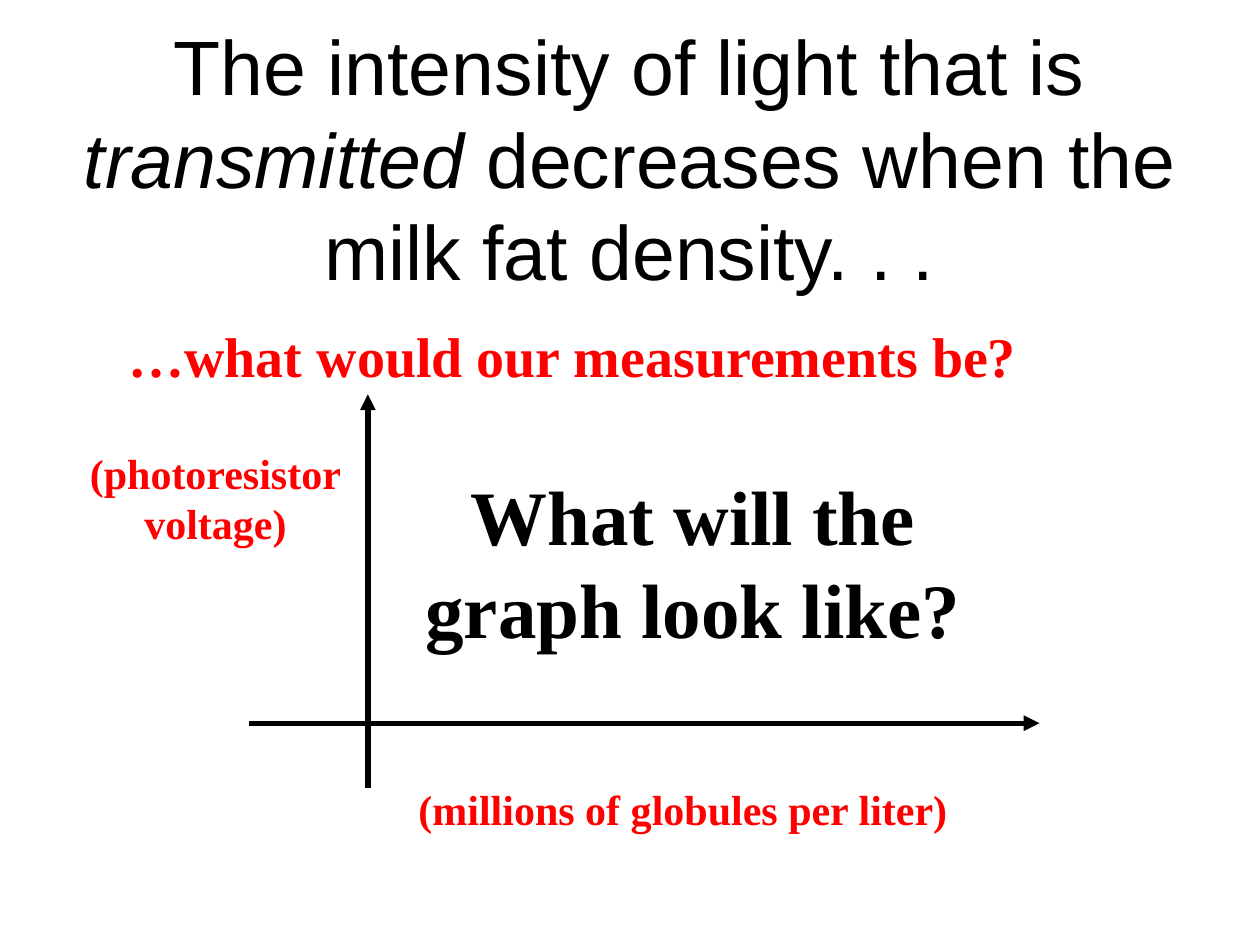
from dataclasses import dataclass

from pptx import Presentation
from pptx.dml.color import RGBColor
from pptx.enum.shapes import MSO_CONNECTOR, MSO_SHAPE
from pptx.enum.text import MSO_ANCHOR, MSO_AUTO_SIZE, PP_ALIGN
from pptx.oxml.ns import qn
from pptx.util import Inches, Pt
from lxml.etree import SubElement


@dataclass(frozen=True)
class Theme:
    ink: RGBColor = RGBColor(0, 0, 0)
    accent: RGBColor = RGBColor(255, 0, 0)
    paper: RGBColor = RGBColor(255, 255, 255)
    heading_font: str = "Arial"
    body_font: str = "Times New Roman"
    large: int = 44
    medium: int = 32
    small: int = 24
    axis_width: int = 3
    leading: float = 1.2


THEME = Theme()


def place(shape, box):
    shape.left, shape.top, shape.width, shape.height = (Inches(v) for v in box)


def write(frame, lines, size, color, font=THEME.body_font, bold=True,
          align=PP_ALIGN.CENTER, anchor=MSO_ANCHOR.TOP, wrap=True):
    """Fill a text frame; each line is a list of (text, italic) runs."""
    frame.auto_size = MSO_AUTO_SIZE.NONE
    frame.word_wrap = wrap
    frame.vertical_anchor = anchor
    for number, line in enumerate(lines):
        paragraph = frame.add_paragraph() if number else frame.paragraphs[0]
        paragraph.alignment = align
        paragraph.line_spacing = Pt(size * THEME.leading)
        for text, italic in line:
            run = paragraph.add_run()
            run.text = text
            run.font.name = font
            run.font.size = Pt(size)
            run.font.bold = bold
            run.font.italic = italic
            run.font.color.rgb = color


def add_title(slide, box):
    title = slide.shapes.title
    place(title, box)
    statement = [("The intensity of light that is ", False),
                 ("transmitted", True),
                 (" decreases when the milk fat density. . .", False)]
    write(title.text_frame, [statement], THEME.large, THEME.ink,
          font=THEME.heading_font, bold=False, anchor=MSO_ANCHOR.MIDDLE)


def add_text(slide, box, text, size, color, align=PP_ALIGN.CENTER):
    textbox = slide.shapes.add_textbox(*(Inches(v) for v in box))
    write(textbox.text_frame, [[(text, False)]], size, color, align=align)


def add_axis_label(slide, box, lines, wrap=True):
    label = slide.shapes.add_shape(MSO_SHAPE.RECTANGLE, *(Inches(v) for v in box))
    label.shadow.inherit = False
    label.fill.solid()
    label.fill.fore_color.rgb = THEME.paper
    label.line.fill.background()
    write(label.text_frame, [[(line, False)] for line in lines],
          THEME.small, THEME.accent, wrap=wrap)


def add_axis(slide, start, end):
    axis = slide.shapes.add_connector(
        MSO_CONNECTOR.STRAIGHT, *(Inches(v) for v in (*start, *end)))
    axis.line.color.rgb = THEME.ink
    axis.line.width = Pt(THEME.axis_width)
    SubElement(axis.line._get_or_add_ln(), qn("a:tailEnd"), type="triangle")
    SubElement(axis._element.spPr, qn("a:effectLst"))


def add_graph(slide, box):
    """Draw empty axes in the box, with their labels and the question."""
    left, top, width, height = box
    origin_x, origin_y = left + 0.94, top + 2.61
    add_axis_label(slide, (left + 1.19, top + 3.04, 4.5, 0.42),
                   ["(millions of globules per liter)"])
    add_axis(slide, (origin_x, top + height), (origin_x, top))
    add_axis(slide, (left, origin_y), (left + width, origin_y))
    add_axis_label(slide, (left - 1.31, top + 0.37, 2.08, 0.75),
                   ["(photoresistor", "voltage)"], wrap=False)
    add_text(slide, (left + 1.27, top + 0.54, 4.5, 1.83),
             "What will the graph look like?", THEME.large, THEME.ink)


def main():
    deck = Presentation()
    deck.slide_width, deck.slide_height = Inches(10), Inches(7.5)
    slide = deck.slides.add_slide(deck.slide_layouts[5])
    add_title(slide, (0, 0, 10, 2.5))
    add_graph(slide, (1.98, 3.13, 6.27, 3.12))
    add_text(slide, (0.92, 2.5, 7.92, 0.58), "…what would our measurements be?",
             THEME.medium, THEME.accent, align=PP_ALIGN.LEFT)
    deck.save("out.pptx")


if __name__ == "__main__":
    main()
